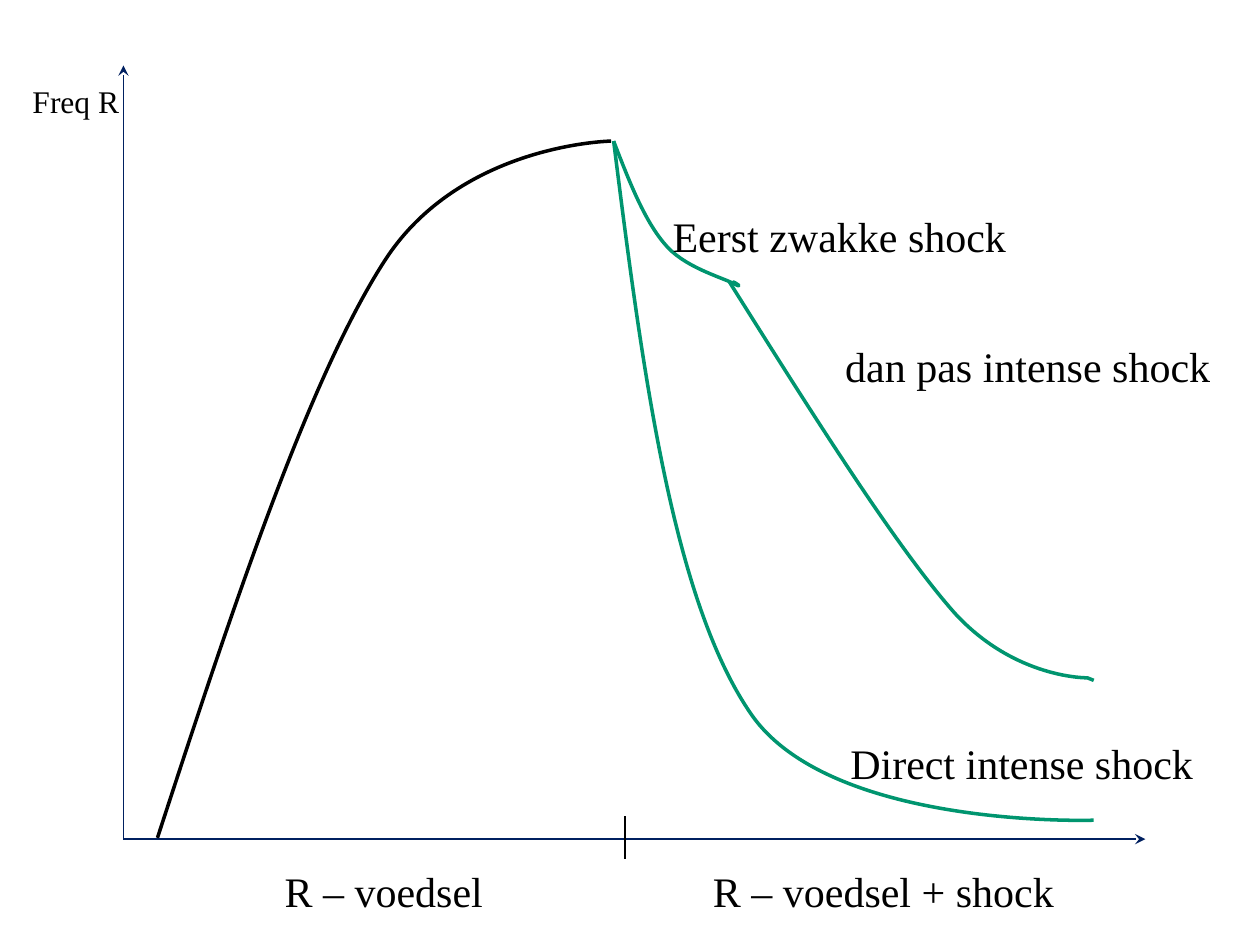
from lxml import etree
from pptx import Presentation
from pptx import util as u
from pptx.dml.color import RGBColor
from pptx.enum import shapes
from pptx.oxml import ns

# Content: places are (column, row) on a grid of 100 by 75 cells
COLUMNS, ROWS = 100, 75
FONT = "Times New Roman"
COLORS = {"axis": "002060", "ink": "000000", "shock": "00956F"}

ORIGIN = (9.8, 66.6)
PEAK = (48.7, 11.2)
LINES = [  # start, end, colour, arrowhead
    (ORIGIN, (9.8, 5.2), "axis", True),
    (ORIGIN, (90.9, 66.6), "axis", True),
    ((49.6, 64.8), (49.6, 68.2), "ink", False),
]
CURVES = [  # colour, start, Bézier points in threes, closing straight points
    ("ink", (12.5, 66.5),
     [(18.5, 48.1), (24.6, 29.8), (30.6, 20.6),
      (36.6, 11.4), (48.5, 11.2), (48.5, 11.2)], []),
    ("shock", PEAK,
     [(51, 29.5), (53.4, 47.8), (59.7, 56.8),
      (66.1, 65.8), (86.8, 65.1), (86.8, 65.1)], []),
    ("shock", (57.9, 22.4),
     [(64.5, 32.9), (71.1, 43.4), (75.8, 48.7),
      (80.6, 53.9), (86.3, 53.8), (86.3, 53.8)], [(86.8, 54)]),
    ("shock", PEAK,
     [(49.9, 14.3), (51.1, 17.4), (52.7, 19.3),
      (54.2, 21.2), (57.3, 22), (58.2, 22.5),
      (59.2, 23), (58.2, 22.3), (58.2, 22.4),
      (58.3, 22.4), (58.4, 22.5), (58.5, 22.6)], []),
]
LABELS = [  # text, left, top, width, height, size
    ("Freq R", 1.6, 6, 9, 4, 18),
    ("R – voedsel + shock", 55.6, 68.2, 29.3, 5.1, 24),
    ("R – voedsel", 21.6, 68.2, 17.9, 5.1, 24),
    ("Direct intense shock", 66.5, 58, 29.5, 5.1, 24),
    ("dan pas intense shock", 66.1, 26.5, 31.3, 5.1, 24),
    ("Eerst zwakke shock", 52.4, 16.2, 28.7, 5.1, 24),
]

presentation = Presentation()
presentation.slide_width, presentation.slide_height = u.Inches(10), u.Inches(7.5)
slide = presentation.slides.add_slide(presentation.slide_layouts[6])


def place(column, row):
    return (round(presentation.slide_width * column / COLUMNS),
            round(presentation.slide_height * row / ROWS))


def color(name):
    return RGBColor.from_string(COLORS[name])


def add_line(start, end, color_name, arrow):
    connector = slide.shapes.add_connector(
        shapes.MSO_CONNECTOR.STRAIGHT, *place(*start), *place(*end))
    connector.line.color.rgb = color(color_name)
    connector.line.width = u.Pt(0.75)
    if arrow:
        etree.SubElement(connector.line._get_or_add_ln(), ns.qn("a:tailEnd"), type="stealth")
    etree.SubElement(connector._element.spPr, ns.qn("a:effectLst"))


def add_curve(color_name, start, bends, closing):
    builder = slide.shapes.build_freeform(*place(*start))
    builder.add_line_segments([place(*point) for point in bends + closing], close=False)
    shape = builder.convert_to_shape()
    shape.shadow.inherit = False
    shape.fill.background()
    shape.line.color.rgb = color(color_name)
    shape.line.width = u.Pt(2)
    # Join each three straight steps into one Bézier segment
    steps = list(shape._element.iter(ns.qn("a:lnTo")))
    for first in range(0, len(bends), 3):
        bezier = etree.Element(ns.qn("a:cubicBezTo"))
        steps[first].addprevious(bezier)
        for step in steps[first:first + 3]:
            bezier.append(step[0])
            step.getparent().remove(step)


def add_label(label, left, top, width, height, size):
    shape = slide.shapes.add_textbox(*place(left, top), *place(width, height))
    shape.text_frame.word_wrap = False
    shape.text_frame.text = label
    font = shape.text_frame.paragraphs[0].runs[0].font
    font.name, font.size = FONT, u.Pt(size)
    font.color.rgb = color("ink")


# Axes and divider, then curves, then labels
for line in LINES:
    add_line(*line)
for curve in CURVES:
    add_curve(*curve)
for label in LABELS:
    add_label(*label)

presentation.save("out.pptx")
